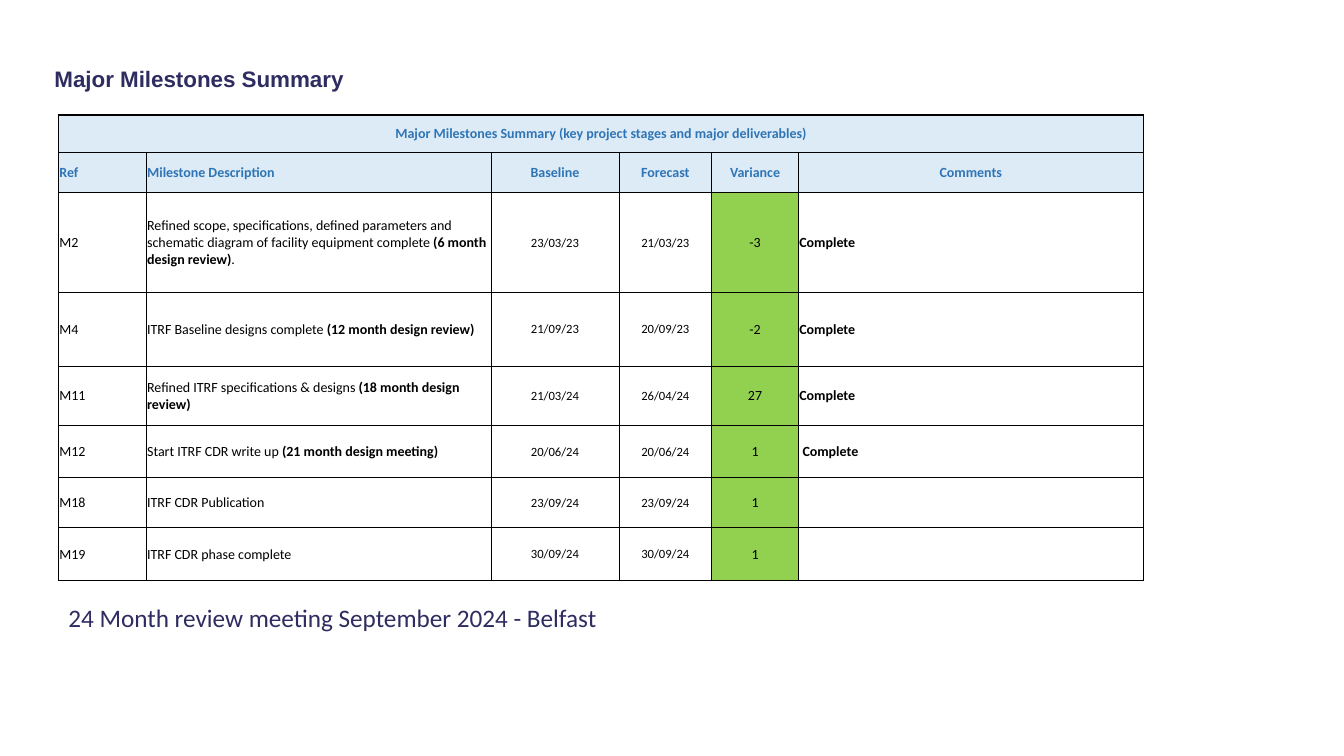
from lxml.etree import SubElement
from pptx import Presentation
from pptx.dml.color import RGBColor
from pptx.enum.text import MSO_ANCHOR, MSO_AUTO_SIZE, PP_ALIGN
from pptx.oxml.ns import qn
from pptx.util import Inches, Pt

WIDTH, HEIGHT = Inches(13.33), Inches(7.5)
NAVY = RGBColor(0x2E, 0x2C, 0x61)
BLUE = RGBColor(0x2F, 0x75, 0xB5)
PALE_BLUE = RGBColor(0xDD, 0xEB, 0xF7)
GREEN = RGBColor(0x92, 0xD0, 0x50)
BLACK = RGBColor(0, 0, 0)

COLUMNS = [0.87, 3.42, 1.27, 0.92, 0.86, 3.42]
ROWS = [0.37, 0.4, 0.99, 0.73, 0.59, 0.52, 0.49, 0.53]
DATE_COLUMNS, VARIANCE, COMMENTS = (2, 3), 4, 5

CAPTION = "Major Milestones Summary (key project stages and major deliverables)"
HEADINGS = ["Ref", "Milestone Description", "Baseline", "Forecast", "Variance", "Comments"]
# Text between ** marks is bold.
MILESTONES = [
    ["M2", "Refined scope, specifications, defined parameters and schematic diagram "
     "of facility equipment complete **(6 month design review)**.",
     "23/03/23", "21/03/23", "-3", "**Complete**"],
    ["M4", "ITRF Baseline designs complete **(12 month design review)**",
     "21/09/23", "20/09/23", "-2", "**Complete**"],
    ["M11", "Refined ITRF specifications & designs **(18 month design review)**",
     "21/03/24", "26/04/24", "27", "**Complete**"],
    ["M12", "Start ITRF CDR write up **(21 month design meeting)**",
     "20/06/24", "20/06/24", "1", " **Complete**"],
    ["M18", "ITRF CDR Publication", "23/09/24", "23/09/24", "1", ""],
    ["M19", "ITRF CDR phase complete", "30/09/24", "30/09/24", "1", ""],
]


def area(left, top, width, height):
    """Turn percentages of the slide into lengths."""
    return (int(WIDTH * left / 100), int(HEIGHT * top / 100),
            int(WIDTH * width / 100), int(HEIGHT * height / 100))


def set_attrs(target, **values):
    for name, value in values.items():
        setattr(target, name, value)


def write(p, text, color, size, name="Calibri", bold=False):
    """Add runs to a paragraph, toggling bold at each ** mark."""
    for i, part in enumerate(text.split("**")):
        if part:
            r = p.add_run()
            r.text = part
            set_attrs(r.font, name=name, size=Pt(size), bold=bold or i % 2 == 1)
            r.font.color.rgb = color


def add_borders(cell, outer=0.5):
    """Draw black edges; outer is the width of all but the bottom one."""
    tc_pr = cell._tc.get_or_add_tcPr()
    for side, width in zip("LRTB", (outer, outer, outer, 0.5)):
        line = SubElement(tc_pr, qn(f"a:ln{side}"), w=str(Pt(width)))
        fill = SubElement(line, qn("a:solidFill"))
        SubElement(fill, qn("a:srgbClr"), val=str(BLACK))


def fill_cell(cell, text, color=BLACK, fill=None, size=10, bold=False, centred=False, outer=0.5):
    edge = Inches(0.01)
    set_attrs(cell, margin_left=edge, margin_right=edge, margin_top=edge,
              margin_bottom=0, vertical_anchor=MSO_ANCHOR.MIDDLE)
    add_borders(cell, outer)
    if fill is None:
        cell.fill.background()
    else:
        cell.fill.solid()
        cell.fill.fore_color.rgb = fill
    p = cell.text_frame.paragraphs[0]
    p.alignment = PP_ALIGN.CENTER if centred else PP_ALIGN.LEFT
    write(p, text, color, size, bold=bold)


def add_title(s, text):
    title = s.shapes.title
    title.left, title.top, title.width, title.height = area(3.3, 5.07, 95.87, 11.2)
    tf = title.text_frame
    set_attrs(tf, vertical_anchor=MSO_ANCHOR.MIDDLE, auto_size=MSO_AUTO_SIZE.NONE, word_wrap=True)
    p = tf.paragraphs[0]
    set_attrs(p, alignment=PP_ALIGN.LEFT, line_spacing=0.9)
    write(p, text, NAVY, 16, name="Arial", bold=True)


def add_milestone_table(s):
    frame = s.shapes.add_table(len(ROWS), len(COLUMNS), *area(4.35, 15.2, 80.65, 61.6))
    table = frame.table
    set_attrs(table, first_row=False, horz_banding=False)
    for column, width in zip(table.columns, COLUMNS):
        column.width = Inches(width)
    for row, height in zip(table.rows, ROWS):
        row.height = Inches(height)

    heading = dict(color=BLUE, fill=PALE_BLUE, bold=True)
    for c, text in enumerate(HEADINGS):
        fill_cell(table.cell(0, c), "" if c else CAPTION, centred=True, outer=1, **heading)
        fill_cell(table.cell(1, c), text, centred=c > 1, **heading)
    table.cell(0, 0).merge(table.cell(0, len(COLUMNS) - 1))

    for r, milestone in enumerate(MILESTONES, start=2):
        for c, text in enumerate(milestone):
            fill_cell(table.cell(r, c), text, fill=GREEN if c == VARIANCE else None,
                      size=9 if c in DATE_COLUMNS else 10, centred=1 < c < COMMENTS)


def add_meeting_note(s, text):
    tf = s.shapes.add_textbox(*area(4.35, 79.07, 41.71, 5.33)).text_frame
    set_attrs(tf, word_wrap=False, auto_size=MSO_AUTO_SIZE.SHAPE_TO_FIT_TEXT)
    write(tf.paragraphs[0], text, NAVY, 18)


def main():
    prs = Presentation()
    set_attrs(prs, slide_width=WIDTH, slide_height=HEIGHT)
    s = prs.slides.add_slide(prs.slide_layouts.get_by_name("Title Only"))
    add_title(s, "Major Milestones Summary")
    add_milestone_table(s)
    add_meeting_note(s, "24 Month review meeting September 2024 - Belfast")
    prs.save("out.pptx")


if __name__ == "__main__":
    main()
